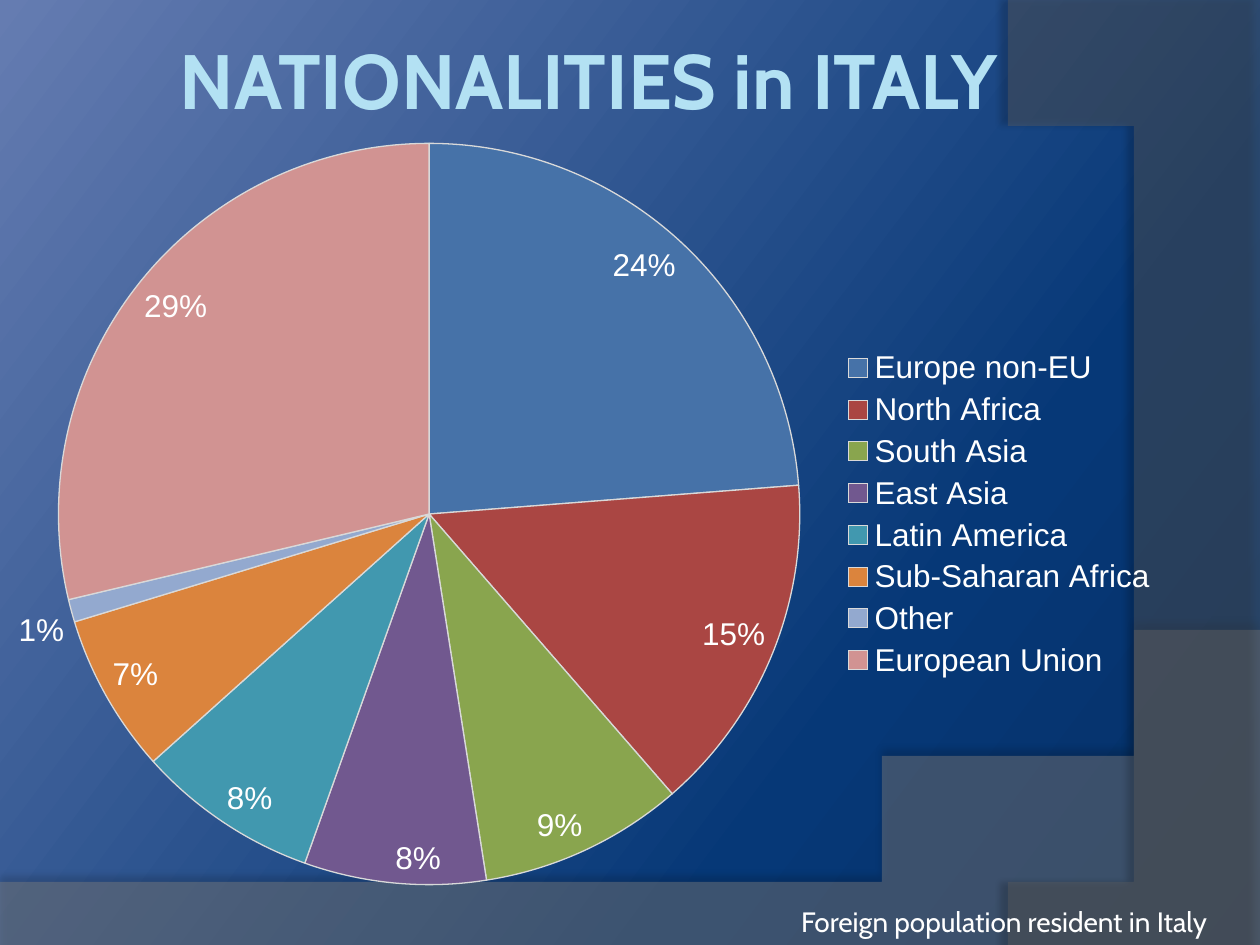
from copy import deepcopy

from lxml import etree
from pptx import Presentation
from pptx import util as u
from pptx.chart.data import CategoryChartData
from pptx.dml.color import RGBColor
from pptx.enum import chart as kinds
from pptx.enum import text as t
from pptx.oxml import ns

WIDTH, HEIGHT = 10, 7.5
WHITE = RGBColor(0xFF, 0xFF, 0xFF)
PALE_BLUE = RGBColor(0xB3, 0xE1, 0xF3)
OUTLINE = RGBColor(0xD9, 0xD9, 0xD9)
WAVE_GREY = RGBColor(0x7F, 0x7F, 0x7F)
ARC_GREY = RGBColor(0x5E, 0x5E, 0x5E)
GRADIENT = [
    (0, RGBColor(0x05, 0x2F, 0x64)),
    (0.3, RGBColor(0x06, 0x38, 0x77)),
    (1, RGBColor(0x65, 0x7C, 0xB1)),
]
NATIONALITIES = [
    ("Europe non-EU", 24, RGBColor(0x46, 0x72, 0xA8)),
    ("North Africa", 15, RGBColor(0xAA, 0x46, 0x43)),
    ("South Asia", 9, RGBColor(0x89, 0xA5, 0x4E)),
    ("East Asia", 8, RGBColor(0x71, 0x58, 0x8F)),
    ("Latin America", 8, RGBColor(0x41, 0x98, 0xAF)),
    ("Sub-Saharan Africa", 7, RGBColor(0xDB, 0x84, 0x3D)),
    ("Other", 1, RGBColor(0x93, 0xA9, 0xCF)),
    ("European Union", 29, RGBColor(0xD1, 0x93, 0x92)),
]


def add_node(parent, tag, **attributes):
    return etree.SubElement(parent, ns.qn(tag), attributes)


def inches(box):
    return [u.Inches(length) for length in box]


def style_font(font, name, size, color, bold=False):
    font.name, font.size, font.bold = name, u.Pt(size), bold
    font.color.rgb = color


def curve(start, first, second, end, steps=40):
    points = []
    for step in range(steps + 1):
        s = step / steps
        weights = ((1 - s) ** 3, 3 * s * (1 - s) ** 2, 3 * s * s * (1 - s), s ** 3)
        corners = list(zip(start, first, second, end))
        points.append(tuple(sum(w * c for w, c in zip(weights, axis)) for axis in corners))
    return points


def paint_background(page):
    fill = page.background.fill
    fill.gradient()
    fill.gradient_angle = 143
    stop_list = page.element.find(".//" + ns.qn("a:gsLst"))
    stop_list.append(deepcopy(stop_list[-1]))
    for stop, (position, color) in zip(fill.gradient_stops, GRADIENT):
        stop.position, stop.color.rgb = position, color


def add_band(page, points, color, opacity, shadow_opacity, distance, direction):
    builder = page.shapes.build_freeform(*points[0], scale=u.Inches(1))
    builder.add_line_segments(points[1:])
    band = builder.convert_to_shape()
    band.fill.solid()
    band.fill.fore_color.rgb = color
    band.line.fill.background()
    band.shadow.inherit = False
    tint = band.element.spPr.find(ns.qn("a:solidFill"))[0]
    add_node(tint, "a:alpha", val=str(opacity * 1000))
    effects = band.element.spPr.find(ns.qn("a:effectLst"))
    shadow = add_node(effects, "a:outerShdw", blurRad=str(u.Pt(4)), dist=str(u.Pt(distance)),
                      dir=str(direction * 60000), algn="ctr", rotWithShape="0")
    shade = add_node(shadow, "a:srgbClr", val="000000")
    add_node(shade, "a:alpha", val=str(shadow_opacity * 1000))


def add_backdrop(page):
    paint_background(page)
    wave = curve((WIDTH, 5.2), (5.59, 7.29), (3.91, 7.19), (0, 7.05))
    add_band(page, [(0, HEIGHT), (WIDTH, HEIGHT)] + wave, WAVE_GREY, 45, 35, 3.5, 270)
    arc = curve((8.21, HEIGHT), (9.35, 6.19), (10.18, 3), (8, 0))
    add_band(page, [(WIDTH, 0.02), (WIDTH, HEIGHT)] + arc, ARC_GREY, 40, 45, 4, 180)


def place_title(page, box):
    title = page.shapes.title
    page.shapes.element.append(title.element)
    title.left, title.top, title.width, title.height = inches(box)
    frame = title.text_frame
    frame.text = "NATIONALITIES in ITALY"
    frame.vertical_anchor = t.MSO_ANCHOR.MIDDLE
    frame.margin_left = frame.margin_right = u.Inches(0.05)
    para = frame.paragraphs[0]
    para.alignment = t.PP_ALIGN.CENTER
    style_font(para.runs[0].font, "Cabin", 44, PALE_BLUE, True)


def fix_plot(chart, x, y, w, h):
    plot_area = chart.element.find(".//" + ns.qn("c:plotArea"))
    layout = plot_area.find(ns.qn("c:layout"))
    if layout is None:
        layout = etree.Element(ns.qn("c:layout"))
        plot_area.insert(0, layout)
    manual = add_node(layout, "c:manualLayout")
    for tag, value in (("layoutTarget", "inner"), ("xMode", "edge"), ("yMode", "edge"),
                       ("x", x), ("y", y), ("w", w), ("h", h)):
        add_node(manual, "c:" + tag, val=str(value))


def add_pie(page, box):
    data = CategoryChartData()
    names, shares, colors = zip(*NATIONALITIES)
    data.categories = names
    data.add_series("Series 1", shares)
    chart = page.shapes.add_chart(kinds.XL_CHART_TYPE.PIE, *inches(box), data).chart
    chart.has_title = False
    style_font(chart.font, "Arial", 18, WHITE)
    chart.has_legend = True
    chart.legend.position = kinds.XL_LEGEND_POSITION.RIGHT
    chart.legend.include_in_layout = False
    plot = chart.plots[0]
    plot.vary_by_categories = True
    series = plot.series[0]
    for index, color in enumerate(colors):
        wedge = series.points[index].format
        wedge.fill.solid()
        wedge.fill.fore_color.rgb = color
        wedge.line.color.rgb = OUTLINE
        wedge.line.width = u.Pt(0.75)
    labels = series.data_labels
    labels.show_percentage, labels.show_value = True, False
    labels.number_format, labels.number_format_is_linked = "0%", False
    labels.position = kinds.XL_LABEL_POSITION.INSIDE_END
    style_font(labels.font, "Arial", 18, WHITE)
    small = series.points[names.index("Other")].data_label
    small.position = kinds.XL_LABEL_POSITION.OUTSIDE_END
    flags = small._dLbl
    flags.find(ns.qn("c:showVal")).set("val", "0")
    flags.find(ns.qn("c:showCatName")).set("val", "0")
    flags.find(ns.qn("c:showPercent")).set("val", "1")
    fix_plot(chart, 0.07, 0.02, 0.62, 0.96)


def add_caption(page, box):
    frame = page.shapes.add_textbox(*inches(box)).text_frame
    frame.word_wrap = True
    frame.text = "Foreign population resident in Italy"
    style_font(frame.paragraphs[0].runs[0].font, "Cabin", 16, WHITE)


def main():
    deck = Presentation()
    deck.slide_width, deck.slide_height = u.Inches(WIDTH), u.Inches(HEIGHT)
    page = deck.slides.add_slide(deck.slide_layouts[5])
    add_backdrop(page)
    place_title(page, (0.59, 0, 8.17, 1.25))
    add_pie(page, (-0.2, 0.99, 9.49, 6.18))
    add_caption(page, (6.26, 7.13, 5.35, 0.37))
    deck.save("out.pptx")


if __name__ == "__main__":
    main()
